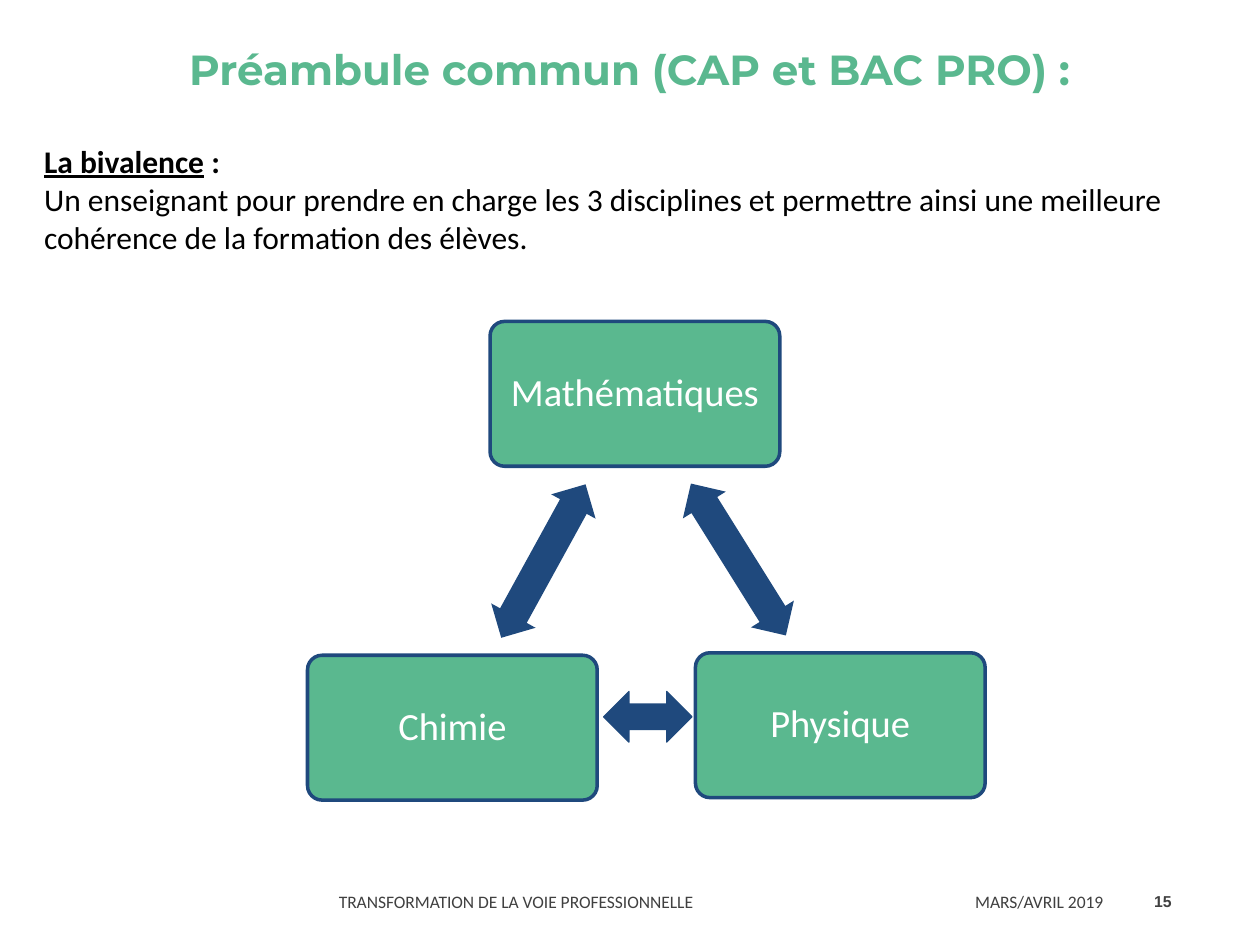
"""Build the slide on teaching three subjects with one teacher."""
from dataclasses import dataclass

import pptx
import pptx.dml.color
import pptx.enum.shapes
import pptx.enum.text
import pptx.util
from pptx.util import Cm

Align = pptx.enum.text.PP_ALIGN
Anchor = pptx.enum.text.MSO_ANCHOR
Preset = pptx.enum.shapes.MSO_SHAPE


@dataclass(frozen=True)
class Theme:
    """Colours, fonts and type sizes of the slide."""
    green: str = "5AB88F"
    navy: str = "1F497D"
    grey: str = "404040"
    black: str = "000000"
    white: str = "FFFFFF"
    heading_font: str = "Montserrat"
    body_font: str = "Calibri"
    number_font: str = "Arial"
    title_size: int = 24
    body_size: int = 18
    subject_size: int = 22
    footer_size: int = 10
    number_size: int = 9


THEME = Theme()


def rgb(value):
    """Turn a hex string into a colour."""
    return pptx.dml.color.RGBColor.from_string(value)


def add_run(paragraph, text, size, colour, font=THEME.body_font, bold=False, underline=False):
    """Append one formatted run to a paragraph."""
    run = paragraph.add_run()
    run.text = text
    run.font.size = pptx.util.Pt(size)
    run.font.name = font
    run.font.color.rgb = rgb(colour)
    run.font.bold = bold
    run.font.underline = underline


def add_text_box(slide, left, top, width, height, anchor=Anchor.MIDDLE):
    """Add a wrapping text box and return its text frame."""
    text_frame = slide.shapes.add_textbox(Cm(left), Cm(top), Cm(width), Cm(height)).text_frame
    text_frame.word_wrap = True
    text_frame.vertical_anchor = anchor
    return text_frame


def add_filled_shape(slide, preset, left, top, width, height, fill, line_width=0):
    """Add a flat preset shape with an optional navy outline."""
    shape = slide.shapes.add_shape(preset, Cm(left), Cm(top), Cm(width), Cm(height))
    shape.shadow.inherit = False
    shape.fill.solid()
    shape.fill.fore_color.rgb = rgb(fill)
    if line_width:
        shape.line.color.rgb = rgb(THEME.navy)
        shape.line.width = pptx.util.Pt(line_width)
    else:
        shape.line.fill.background()
    return shape


def add_subject(slide, name, left, top):
    """Add a rounded box naming one subject."""
    shape = add_filled_shape(slide, Preset.ROUNDED_RECTANGLE, left, top, 5.84, 2.92, THEME.green, 2)
    shape.adjustments[0] = 0.1
    text_frame = shape.text_frame
    text_frame.word_wrap = True
    text_frame.vertical_anchor = Anchor.MIDDLE
    paragraph = text_frame.paragraphs[0]
    paragraph.alignment = Align.CENTER
    paragraph.line_spacing = 0.9
    add_run(paragraph, name, THEME.subject_size, THEME.white)


def add_double_arrow(slide, left, top, width, rotation=0, shaft=0.6, line_width=0):
    """Add a two-headed block arrow between two subjects."""
    shape = add_filled_shape(slide, Preset.LEFT_RIGHT_ARROW, left, top, width, 1.02,
                             THEME.navy, line_width)
    shape.adjustments[0] = shaft
    shape.adjustments[1] = 0.5
    shape.rotation = rotation


def add_title(slide):
    """Add the centred heading."""
    paragraph = add_text_box(slide, 0.61, 0.38, 24.16, 2.01).paragraphs[0]
    paragraph.alignment = Align.CENTER
    add_run(paragraph, "Préambule commun (CAP et BAC PRO) :", THEME.title_size,
            THEME.green, THEME.heading_font, bold=True)


def add_introduction(slide):
    """Add the underlined lead and its explanation."""
    text_frame = add_text_box(slide, 0.64, 2.74, 24.13, 2.57, Anchor.TOP)
    lead = text_frame.paragraphs[0]
    add_run(lead, "La bivalence", THEME.body_size, THEME.black, bold=True, underline=True)
    add_run(lead, " :", THEME.body_size, THEME.black, bold=True)
    add_run(text_frame.add_paragraph(),
            "Un enseignant pour prendre en charge les 3 disciplines et permettre ainsi "
            "une meilleure cohérence de la formation des élèves.",
            THEME.body_size, THEME.black)


def add_footer(slide):
    """Add the footer text, the date and the slide number."""
    for text, left, width in (("TRANSFORMATION DE LA VOIE PROFESSIONNELLE", 6.58, 12.83),
                              ("MARS/AVRIL 2019", 19.41, 3.23)):
        paragraph = add_text_box(slide, left, 17.65, width, 1.02).paragraphs[0]
        paragraph.line_spacing = pptx.util.Pt(13.2)
        add_run(paragraph, text, THEME.footer_size, THEME.grey)
    number = add_text_box(slide, 22.63, 17.65, 1.24, 1.02).paragraphs[0]
    number.alignment = Align.RIGHT
    add_run(number, "15", THEME.number_size, THEME.grey, THEME.number_font, bold=True)


def main():
    """Build and save the presentation."""
    presentation = pptx.Presentation()
    presentation.slide_width = Cm(25.4)
    presentation.slide_height = Cm(19.05)
    slide = presentation.slides.add_slide(presentation.slide_layouts[6])
    add_footer(slide)
    add_title(slide)
    add_introduction(slide)
    for name, left, top in (("Mathématiques", 9.88, 6.48),
                            ("Physique", 14.02, 13.16),
                            ("Chimie", 6.2, 13.21)):
        add_subject(slide, name, left, top)
    add_double_arrow(slide, 13.08, 10.77, 3.61, rotation=58)
    add_double_arrow(slide, 9.19, 10.8, 3.53, rotation=298.8)
    add_double_arrow(slide, 12.17, 13.94, 1.78, shaft=0.5, line_width=0.75)
    presentation.save("out.pptx")


if __name__ == "__main__":
    main()
